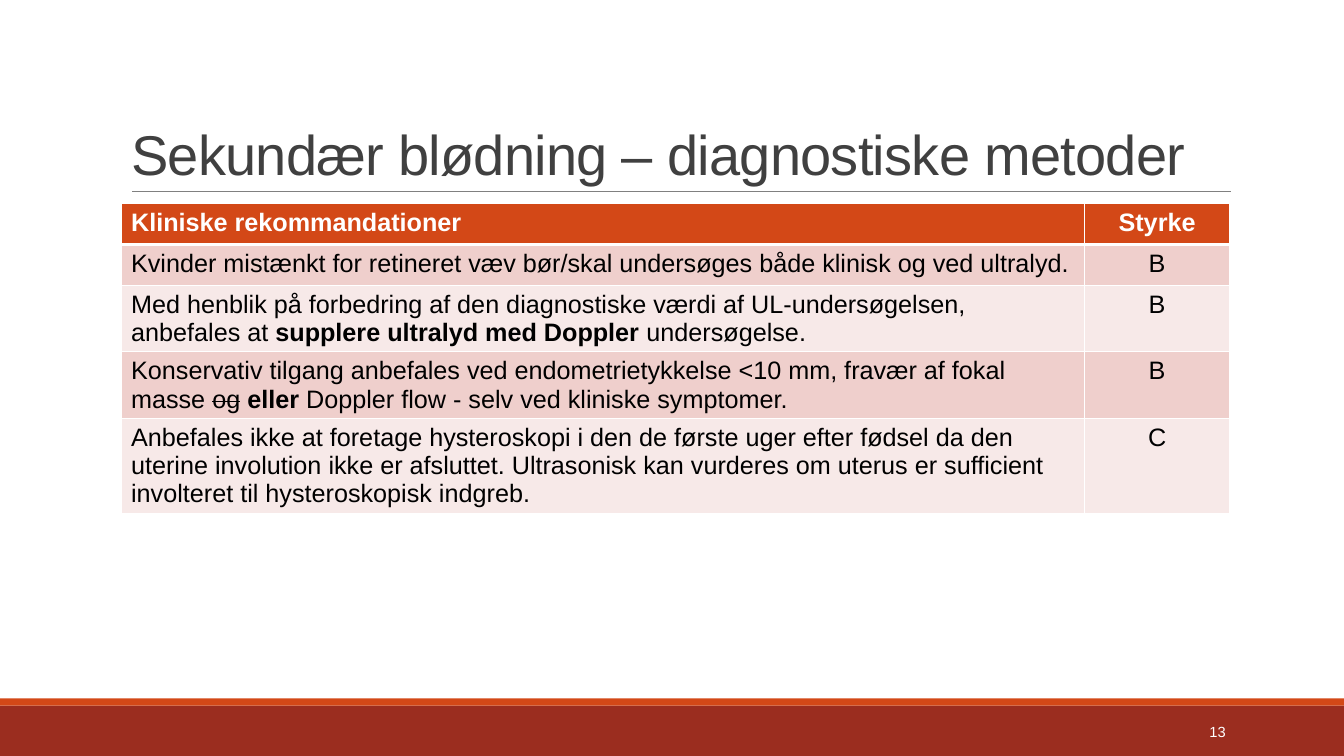
from lxml.etree import SubElement
from pptx import Presentation
from pptx.dml.color import RGBColor
from pptx.enum.shapes import MSO_CONNECTOR as Connector, MSO_SHAPE as Shape
from pptx.enum.text import MSO_ANCHOR as Anchor, MSO_AUTO_SIZE as AutoSize, PP_ALIGN as Align
from pptx.oxml.ns import qn
from pptx.util import Cm, Pt

WIDTH, HEIGHT = 33.87, 19.05
LEFT, CONTENT_WIDTH = 3.05, 27.94
ACCENT, DARK_ACCENT, WHITE, BLACK = "D34817", "9B2D1F", "FFFFFF", "000000"
BANDS = ("EFCFCC", "F7E9E8")

RECOMMENDATIONS = [
    ([("Kvinder mistænkt for retineret væv bør/skal undersøges både klinisk og ved ultralyd.", "")], "B"),
    ([("Med henblik på forbedring af den diagnostiske værdi af UL-undersøgelsen, anbefales at ", ""),
      ("supplere ultralyd med Doppler ", "bold"),
      ("undersøgelse.", "")], "B"),
    ([("Konservativ tilgang anbefales ved endometrietykkelse <10 mm, fravær af fokal masse ", ""),
      ("og", "strike"),
      (" ", ""),
      ("eller ", "bold"),
      ("Doppler flow - selv ved kliniske symptomer.", "")], "B"),
    ([("Anbefales ikke at foretage hysteroskopi i den de første uger efter fødsel da den uterine "
       "involution ikke er afsluttet. Ultrasonisk kan vurderes om uterus er sufficient involteret "
       "til hysteroskopisk indgreb.", "")], "C"),
]


def colour(value):
    return RGBColor.from_string(value)


class SlideBuilder:
    font = "Arial"

    def __init__(self, page):
        self.page = page

    def add_spans(self, para, spans, size, ink, align=Align.LEFT, spacing=None):
        para.alignment = align
        for text, style in spans:
            span = para.add_run()
            span.text = text
            span.font.name = self.font
            span.font.size = Pt(size)
            span.font.bold = style == "bold"
            span.font.color.rgb = colour(ink)
            properties = span._r.get_or_add_rPr()
            if style == "strike":
                properties.set("strike", "sngStrike")
            if spacing is not None:
                properties.set("spc", str(int(spacing * 100)))

    def band(self, top, height, fill):
        bar = self.page.shapes.add_shape(Shape.RECTANGLE, 0, Cm(top), Cm(WIDTH), Cm(height))
        bar.shadow.inherit = False
        bar.fill.solid()
        bar.fill.fore_color.rgb = colour(fill)
        bar.line.fill.background()

    def rule(self, left, right, top, ink, weight):
        line = self.page.shapes.add_connector(
            Connector.STRAIGHT, Cm(left), Cm(top), Cm(right), Cm(top))
        line.line.color.rgb = colour(ink)
        line.line.width = Pt(weight)
        SubElement(line._element.spPr, qn("a:effectLst"))

    def title(self, text, left, top, width, height):
        box = self.page.shapes.title
        box.left, box.top, box.width, box.height = Cm(left), Cm(top), Cm(width), Cm(height)
        frame = box.text_frame
        frame.word_wrap = True
        frame.auto_size = AutoSize.NONE
        frame.vertical_anchor = Anchor.BOTTOM
        para = frame.paragraphs[0]
        para.line_spacing = 0.85
        self.add_spans(para, [(text, "")], 40, "404040", spacing=-0.5)

    def page_number(self, text, left, top, width, height):
        box = self.page.shapes.add_textbox(Cm(left), Cm(top), Cm(width), Cm(height))
        frame = box.text_frame
        frame.word_wrap = True
        frame.vertical_anchor = Anchor.MIDDLE
        self.add_spans(frame.paragraphs[0], [(text, "")], 10.5, WHITE, Align.RIGHT)

    def cell(self, cell, spans, fill, ink, align, top_border, bottom_border):
        borders = {"lnL": 1, "lnR": 1, "lnT": top_border, "lnB": bottom_border}
        properties = cell._tc.get_or_add_tcPr()
        for side, weight in borders.items():
            edge = SubElement(properties, qn(f"a:{side}"), w=str(Pt(weight)))
            paint = SubElement(edge, qn("a:solidFill"))
            SubElement(paint, qn("a:srgbClr"), val=WHITE)
        cell.fill.solid()
        cell.fill.fore_color.rgb = colour(fill)
        self.add_spans(cell.text_frame.paragraphs[0], spans, 18, ink, align)

    def table(self, headings, rows, left, top, widths, row_height):
        content = [[[(heading, "bold")] for heading in headings]]
        content += [[spans, [(grade, "")]] for spans, grade in rows]
        grid = self.page.shapes.add_table(
            len(content), len(widths), Cm(left), Cm(top),
            Cm(sum(widths)), Cm(row_height * len(content))).table
        for column, width in zip(grid.columns, widths):
            column.width = Cm(width)
        for index, cells in enumerate(content):
            grid.rows[index].height = Cm(row_height)
            fill = BANDS[(index - 1) % 2] if index else ACCENT
            ink = BLACK if index else WHITE
            for position, spans in enumerate(cells):
                self.cell(grid.cell(index, position), spans, fill, ink,
                          Align.CENTER if position else Align.LEFT,
                          3 if index == 1 else 1, 3 if index == 0 else 1)


def main():
    deck = Presentation()
    deck.slide_width, deck.slide_height = Cm(WIDTH), Cm(HEIGHT)
    slide = SlideBuilder(deck.slides.add_slide(deck.slide_layouts[5]))
    slide.band(17.78, 1.27, DARK_ACCENT)
    slide.band(17.6, 0.18, ACCENT)
    slide.rule(3.33, 31.01, 4.83, "808080", 0.5)
    slide.title("Sekundær blødning – diagnostiske metoder", LEFT, 0.79, CONTENT_WIDTH, 4.04)
    slide.table(("Kliniske rekommandationer", "Styrke"), RECOMMENDATIONS,
                LEFT, 5.13, (24.28, 3.66), 1.03)
    slide.page_number("13", 27.51, 17.93, 3.63, 1.02)
    deck.save("out.pptx")


if __name__ == "__main__":
    main()
